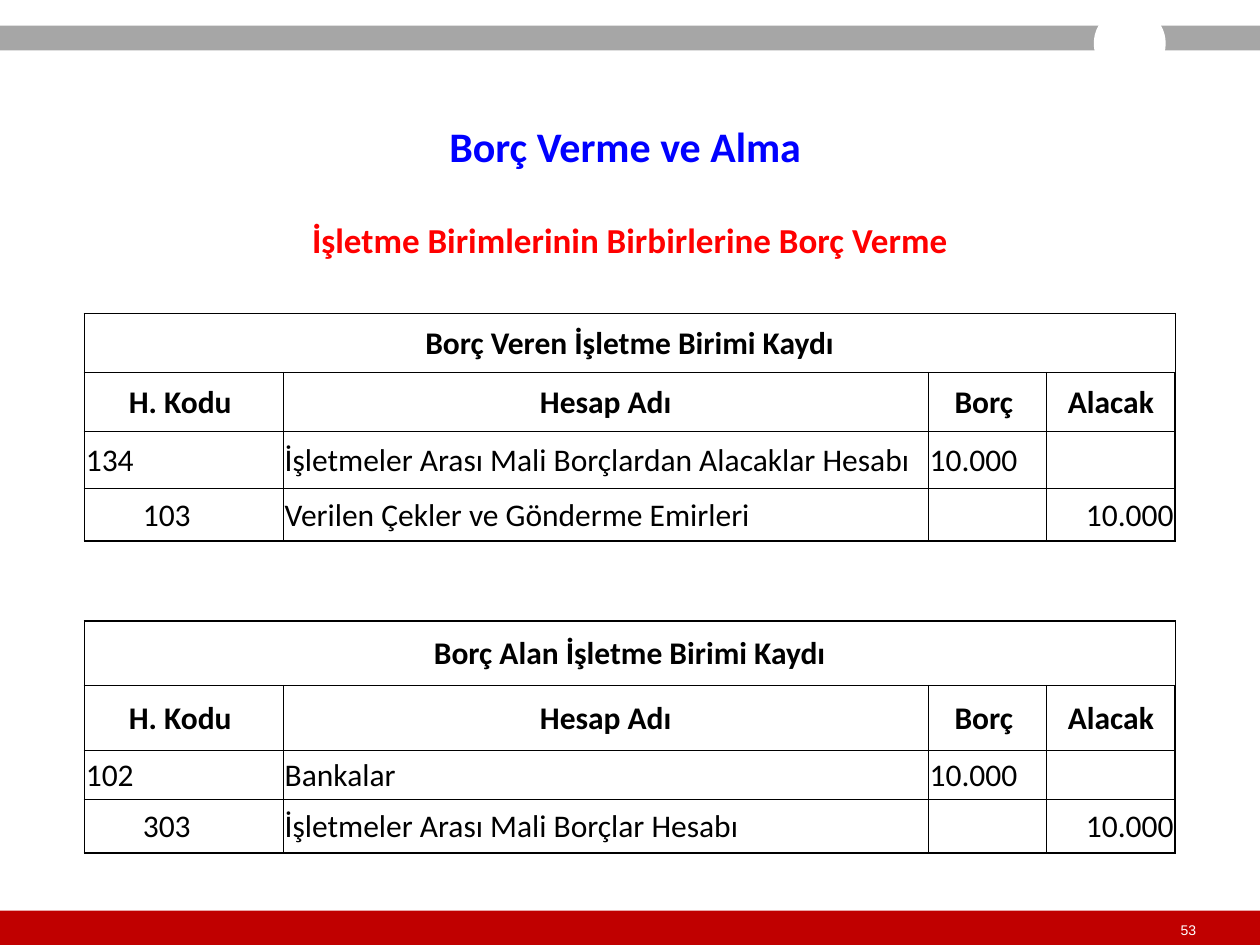
from pptx import Presentation
from pptx.dml.color import RGBColor
from pptx.enum.shapes import MSO_SHAPE
from pptx.enum.text import MSO_ANCHOR, PP_ALIGN
from pptx.oxml.ns import qn
from pptx.util import Cm, Pt
from lxml import etree

BLACK = RGBColor(0x00, 0x00, 0x00)
WHITE = RGBColor(0xFF, 0xFF, 0xFF)
GREY = RGBColor(0xA6, 0xA6, 0xA6)
DARK_RED = RGBColor(0xC0, 0x00, 0x00)
RED = RGBColor(0xFF, 0x00, 0x00)
BLUE = RGBColor(0x00, 0x00, 0xFF)

RECTANGLE, OVAL = MSO_SHAPE.RECTANGLE, MSO_SHAPE.OVAL
LEFT, CENTER, RIGHT = PP_ALIGN.LEFT, PP_ALIGN.CENTER, PP_ALIGN.RIGHT
MIDDLE, TOP = MSO_ANCHOR.MIDDLE, MSO_ANCHOR.TOP

PAGE_WIDTH, PAGE_HEIGHT = 25.4, 19.05
TABLE_LEFT = 1.7
COLUMN_WIDTHS = (4.01, 13, 2.39, 2.59)
HEADINGS = ("H. Kodu ", "Hesap Adı", "Borç ", "Alacak")
CREDIT_INDENT = 1.15
THICK, THIN = 1, 0.5


class Page:
    def __init__(self, deck, font="Calibri"):
        self.slide = deck.slides.add_slide(deck.slide_layouts[6])
        self.shapes = self.slide.shapes
        self.font = font

    def add_span(self, para, text, size, color=BLACK, bold=False, align=LEFT, font=None):
        para.alignment = align
        span = para.add_run()
        span.text = text
        span.font.name = font or self.font
        span.font.size = Pt(size)
        span.font.bold = bold
        span.font.color.rgb = color

    def shape(self, kind, left, top, width, height, color):
        shape = self.shapes.add_shape(kind, Cm(left), Cm(top), Cm(width), Cm(height))
        shape.shadow.inherit = False
        shape.fill.solid()
        shape.fill.fore_color.rgb = color
        shape.line.fill.background()
        return shape

    def text(self, left, top, width, height, text, size, anchor=TOP, wrap=True,
             inset=None, **style):
        box = self.shapes.add_textbox(Cm(left), Cm(top), Cm(width), Cm(height))
        frame = box.text_frame
        frame.word_wrap = wrap
        frame.vertical_anchor = anchor
        if inset is not None:
            frame.margin_left = frame.margin_right = Cm(inset)
            frame.margin_top = frame.margin_bottom = Cm(inset)
        self.add_span(frame.paragraphs[0], text, size, **style)

    def borders(self, cell, **widths):
        """Draw the left, right, top and bottom borders (L, R, T, B) in points."""
        properties = cell._tc.get_or_add_tcPr()
        for position, side in enumerate("LRTB"):
            line = etree.Element(qn("a:ln" + side), w=str(Pt(widths[side])))
            fill = etree.SubElement(line, qn("a:solidFill"))
            etree.SubElement(fill, qn("a:srgbClr"), val=str(BLACK))
            properties.insert(position, line)

    def journal(self, top, heights, title, debit, credit):
        """Add a journal entry: title, headings, a debit row and a credit row."""
        rows = ((title, "", "", ""), HEADINGS, debit, credit)
        last_row, last_column = len(rows) - 1, len(HEADINGS) - 1
        table = self.shapes.add_table(
            len(rows), len(HEADINGS), Cm(TABLE_LEFT), Cm(top),
            Cm(sum(COLUMN_WIDTHS)), Cm(sum(heights))).table
        table.first_row = table.horz_banding = False
        for column, width in zip(table.columns, COLUMN_WIDTHS):
            column.width = Cm(width)
        for row, height in zip(table.rows, heights):
            row.height = Cm(height)
        table.cell(0, 0).merge(table.cell(0, last_column))

        for r, row in enumerate(rows):
            for c, text in enumerate(row):
                cell = table.cell(r, c)
                cell.fill.background()
                cell.vertical_anchor = MIDDLE
                cell.margin_left = cell.margin_right = cell.margin_top = Cm(0.03)
                cell.margin_bottom = 0
                self.borders(cell,
                             L=THICK if c == 0 else THIN,
                             R=THICK if c == last_column else THIN,
                             T=THICK if r < 2 else THIN,
                             B=THICK if r in (0, last_row) else THIN)
                if not text:
                    continue
                para = cell.text_frame.paragraphs[0]
                heading = r < 2
                align = CENTER if heading else RIGHT if c == last_column else LEFT
                if r == last_row and c == 0:
                    para._p.get_or_add_pPr().set("marL", str(Cm(CREDIT_INDENT)))
                self.add_span(para, text, 18, bold=heading, align=align)


def main():
    deck = Presentation()
    deck.slide_width, deck.slide_height = Cm(PAGE_WIDTH), Cm(PAGE_HEIGHT)
    page = Page(deck)

    page.shape(RECTANGLE, 0, 18.36, PAGE_WIDTH, 0.69, DARK_RED)
    page.text(23.8, 18.59, 0.36, 0.33, "53", 8, anchor=MIDDLE, wrap=False,
              inset=0, color=WHITE, font="Arial")
    page.shape(RECTANGLE, 0, 0.52, PAGE_WIDTH, 0.5, GREY)
    page.shape(OVAL, 22.05, 0.15, 1.45, 1.45, WHITE)

    page.journal(6.32, (1.19, 1.19, 1.14, 1.07), "Borç Veren İşletme Birimi Kaydı",
                 ("134", "İşletmeler Arası Mali Borçlardan Alacaklar Hesabı", "10.000", ""),
                 ("103", "Verilen Çekler ve Gönderme Emirleri", "", "10.000"))
    page.text(0, 4.29, PAGE_WIDTH, 1.12, "İşletme Birimlerinin Birbirlerine Borç Verme",
              20, color=RED, bold=True, align=CENTER)
    page.journal(12.52, (1.3, 1.3, 0.99, 1.09), "Borç Alan İşletme Birimi Kaydı",
                 ("102", "Bankalar", "10.000", ""),
                 ("303", "İşletmeler Arası Mali Borçlar Hesabı", "", "10.000"))

    title = page.shape(RECTANGLE, 0, 2.13, PAGE_WIDTH, 1.6, WHITE)
    title.text_frame.vertical_anchor = MIDDLE
    page.add_span(title.text_frame.paragraphs[0], "Borç Verme ve Alma ", 24,
                  color=BLUE, bold=True, align=CENTER)

    deck.save("out.pptx")


if __name__ == "__main__":
    main()
